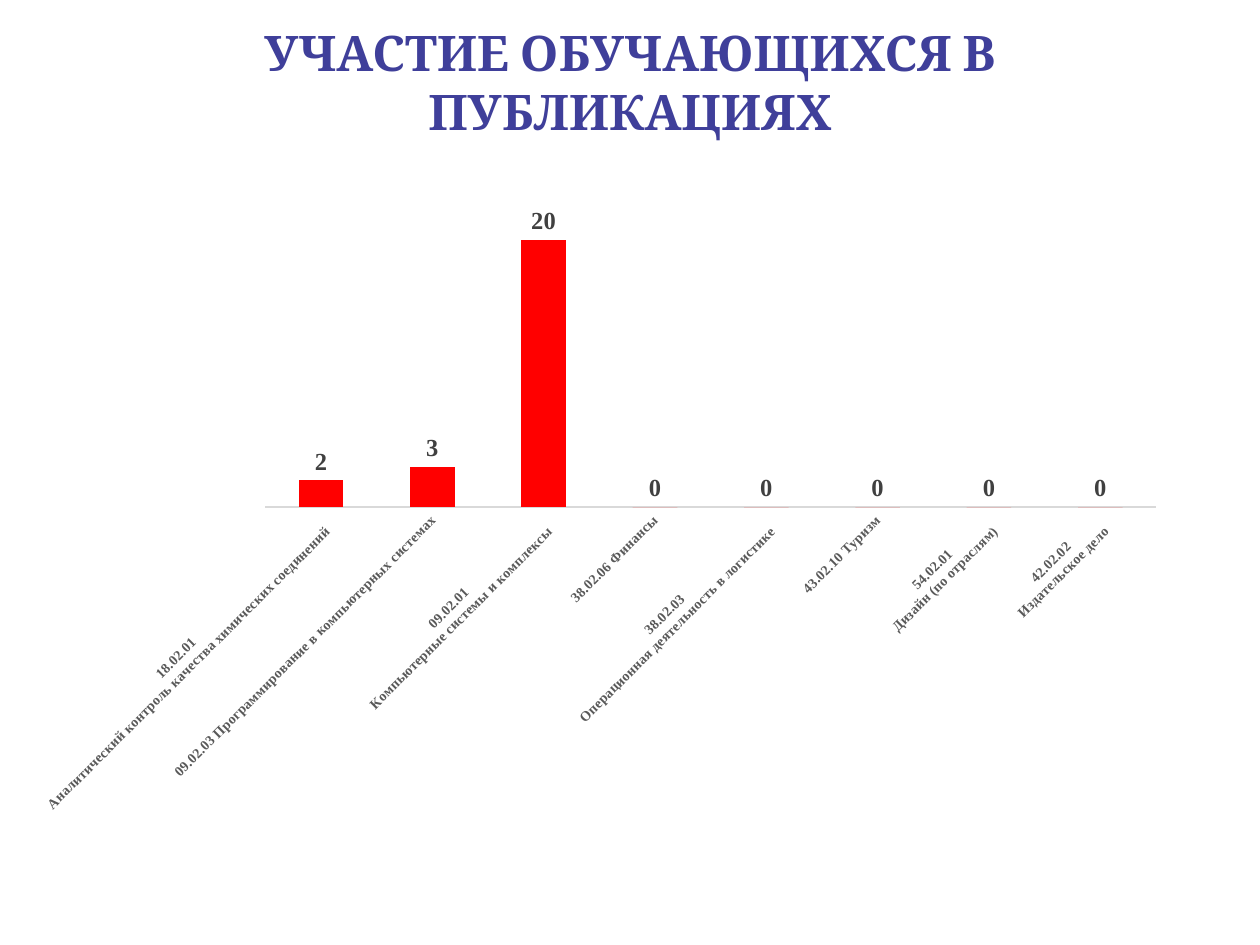
from dataclasses import dataclass

from pptx import Presentation
from pptx import util as u
from pptx.chart.data import CategoryChartData
from pptx.dml.color import RGBColor
from pptx.enum import chart as charts, text
from pptx.oxml import ns

INDIGO = RGBColor(0x3F, 0x3F, 0x9A)
RED = RGBColor(0xFF, 0x00, 0x00)
BLACK = RGBColor(0x00, 0x00, 0x00)
DARK_GREY = RGBColor(0x40, 0x40, 0x40)
MID_GREY = RGBColor(0x59, 0x59, 0x59)
LIGHT_GREY = RGBColor(0xD9, 0xD9, 0xD9)
SERIF = "Times New Roman"


@dataclass
class Programme:
    name: str
    publications: int


PROGRAMMES = [
    Programme("18.02.01 \nАналитический контроль качества химических соединений", 2),
    Programme("09.02.03 Программирование в компьютерных системах", 3),
    Programme("09.02.01 \nКомпьютерные системы и комплексы", 20),
    Programme("38.02.06 Финансы", 0),
    Programme("38.02.03 \nОперационная деятельность в логистике", 0),
    Programme("43.02.10 Туризм", 0),
    Programme("54.02.01 \nДизайн (по отраслям)", 0),
    Programme("42.02.02 \nИздательское дело", 0),
]


def set_attributes(target, values: dict) -> None:
    for name, value in values.items():
        setattr(target, name, value)


def style_font(font, name: str, size: float, color: RGBColor) -> None:
    set_attributes(font, {"name": name, "size": u.Pt(size), "bold": True})
    font.color.rgb = color


def add_title(slide, title: str) -> None:
    shape = slide.shapes.add_textbox(u.Inches(0.5), u.Inches(0.13), u.Inches(9), u.Inches(1.25))
    set_attributes(shape.text_frame, {"word_wrap": True, "vertical_anchor": text.MSO_ANCHOR.TOP})
    paragraph = shape.text_frame.paragraphs[0]
    paragraph.alignment = text.PP_ALIGN.CENTER
    run = paragraph.add_run()
    run.text = title
    style_font(run.font, "Cambria", 28, INDIGO)


def add_publications_chart(slide, programmes: list[Programme]) -> None:
    data = CategoryChartData(number_format="General")
    data.categories = [programme.name for programme in programmes]
    data.add_series("Series 1", [programme.publications for programme in programmes])
    chart = slide.shapes.add_chart(
        charts.XL_CHART_TYPE.COLUMN_CLUSTERED,
        u.Inches(0.07), u.Inches(1.27), u.Inches(9.29), u.Inches(5.28), data,
    ).chart
    set_attributes(chart, {"has_legend": False, "has_title": False})
    style_font(chart.font, SERIF, 14, BLACK)

    plot = chart.plots[0]
    set_attributes(plot, {"gap_width": 150, "overlap": -25, "vary_by_categories": False})
    fill = plot.series[0].format.fill
    fill.solid()
    fill.fore_color.rgb = RED
    labels = plot.series[0].data_labels
    set_attributes(labels, {"show_value": True, "position": charts.XL_LABEL_POSITION.OUTSIDE_END})
    style_font(labels.font, SERIF, 14, DARK_GREY)

    set_attributes(chart.value_axis, {
        "visible": False, "has_major_gridlines": False, "minimum_scale": 0, "maximum_scale": 25,
    })
    axis = chart.category_axis
    set_attributes(axis, {
        "major_tick_mark": charts.XL_TICK_MARK.NONE,
        "minor_tick_mark": charts.XL_TICK_MARK.NONE,
        "has_major_gridlines": False,
    })
    style_font(axis.tick_labels.font, SERIF, 8, MID_GREY)
    axis._element.find(ns.qn("c:txPr")).find(ns.qn("a:bodyPr")).set("rot", "-2700000")
    axis.format.line.color.rgb = LIGHT_GREY
    axis.format.line.width = u.Pt(0.75)


def main() -> None:
    """Build the slide on student participation in publications."""
    presentation = Presentation()
    set_attributes(presentation, {"slide_width": u.Inches(10), "slide_height": u.Inches(7.5)})
    slide = presentation.slides.add_slide(presentation.slide_layouts[6])
    add_title(slide, "УЧАСТИЕ ОБУЧАЮЩИХСЯ В ПУБЛИКАЦИЯХ")
    add_publications_chart(slide, PROGRAMMES)
    presentation.save("out.pptx")


if __name__ == "__main__":
    main()
